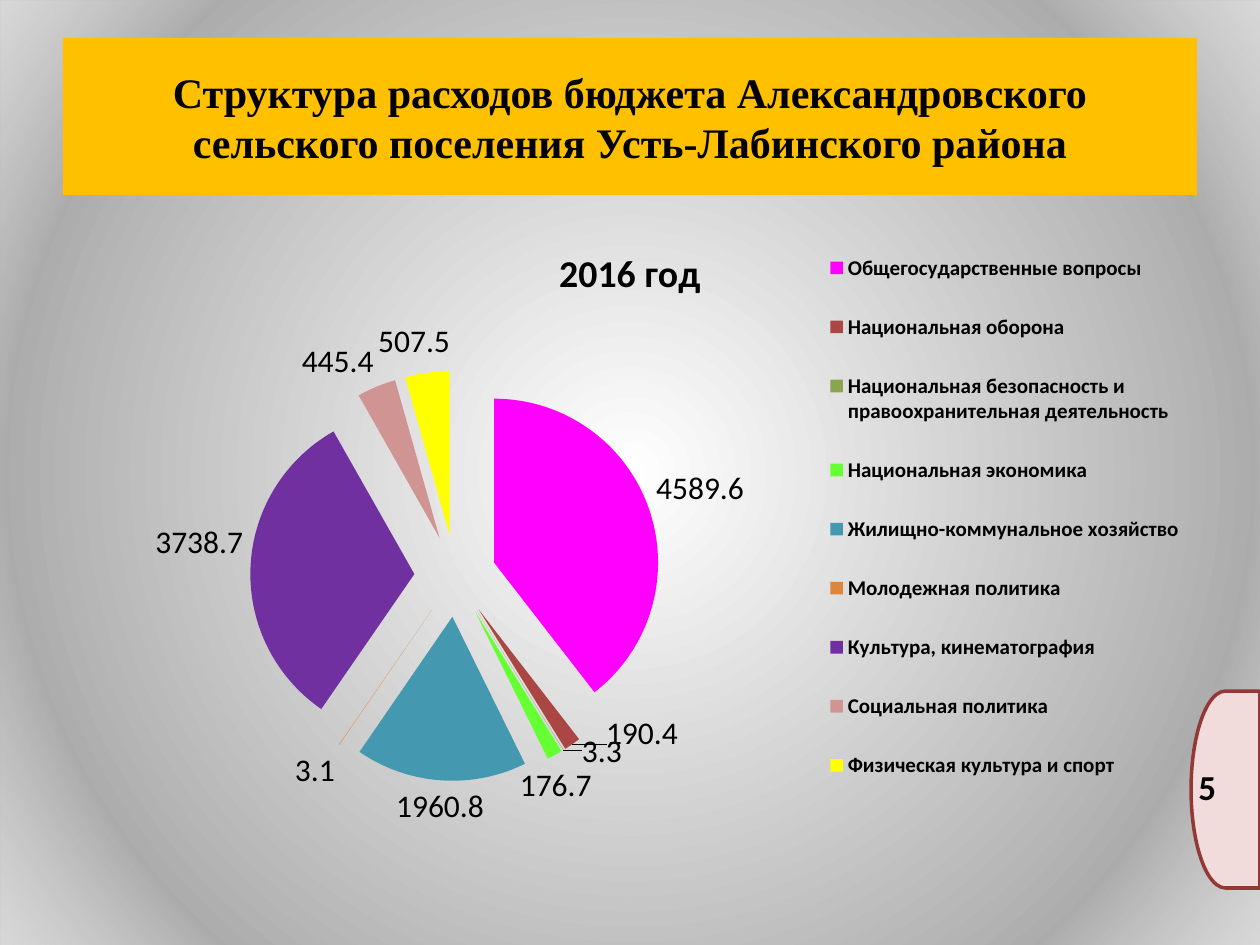
from lxml import etree
from pptx import Presentation
from pptx.chart.data import CategoryChartData
from pptx.dml.color import RGBColor
from pptx.enum.chart import XL_CHART_TYPE, XL_LABEL_POSITION as LabelPosition, XL_LEGEND_POSITION
from pptx.enum.shapes import MSO_SHAPE as Shape
from pptx.enum.text import MSO_ANCHOR as Anchor, PP_ALIGN as Align
from pptx.oxml import parse_xml
from pptx.oxml.ns import nsdecls, qn
from pptx.util import Emu, Pt

BLACK = RGBColor(0x00, 0x00, 0x00)
GOLD = RGBColor(0xFF, 0xC0, 0x00)
ROSE = RGBColor(0xF2, 0xDC, 0xDB)
MAROON = RGBColor(0x95, 0x37, 0x35)
MAGENTA = RGBColor(0xFF, 0x00, 0xFF)
BRICK = RGBColor(0xAA, 0x47, 0x44)
OLIVE = RGBColor(0x89, 0xA6, 0x4F)
LIME = RGBColor(0x66, 0xFF, 0x33)
TEAL = RGBColor(0x44, 0x99, 0xB1)
ORANGE = RGBColor(0xDB, 0x85, 0x3E)
PURPLE = RGBColor(0x70, 0x30, 0xA0)
PINK = RGBColor(0xD0, 0x94, 0x93)
YELLOW = RGBColor(0xFF, 0xFF, 0x00)
WHITE = RGBColor(0xFF, 0xFF, 0xFF)
GRAY = RGBColor(0x97, 0x97, 0x97)
SILVER = RGBColor(0xD9, 0xD9, 0xD9)

SLIDE_BOX = (0, 0, 1260, 945)
TITLE_BOX = (63, 38, 1134, 157)
CHART_BOX = (63, 220, 1134, 624)
PLOT_BOX = (250, 371, 410, 410)
LEGEND_BOX = (820, 221, 369, 591)
TAB_BOX = (1191, 691, 69, 197)
NUMBER_BOX = (1186, 759, 73, 55)

BACKGROUND_STOPS = [(0, WHITE, 100), (100, GRAY, 100)]
VIGNETTE_STOPS = [(79, WHITE, 0), (100, SILVER, 100)]
TITLE = "Структура расходов бюджета Александровского сельского поселения Усть-Лабинского района"
CHART_TITLE = "2016 год"
PAGE_NUMBER = "5"
EXPENSES = [
    ("Общегосударственные вопросы", 4589.6, MAGENTA),
    ("Национальная оборона", 190.4, BRICK),
    ("Национальная безопасность и правоохранительная деятельность", 3.3, OLIVE),
    ("Национальная экономика", 176.7, LIME),
    ("Жилищно-коммунальное хозяйство", 1960.8, TEAL),
    ("Молодежная политика", 3.1, ORANGE),
    ("Культура, кинематография", 3738.7, PURPLE),
    ("Социальная политика", 445.4, PINK),
    ("Физическая культура и спорт", 507.5, YELLOW),
]
LABEL_SHIFTS = {1: (30, -36), 2: (15, -24), 3: (-39, 5), 6: (0, -24), 8: (24, -5)}


def px(*lengths):
    """Turn pixel lengths into EMU."""
    return [Emu(round(length * 914400 / 126)) for length in lengths]


def format_font(font, size, bold=False, name="Calibri"):
    """Set the size, weight, typeface and colour of a font."""
    font.size, font.bold, font.name = Pt(size), bold, name
    font.color.rgb = BLACK


def write_text(frame, text, size, align=Align.LEFT, anchor=Anchor.TOP, name="Calibri"):
    """Write one bold paragraph into a text frame."""
    frame.word_wrap = True
    frame.vertical_anchor = anchor
    paragraph = frame.paragraphs[0]
    paragraph.alignment = align
    run = paragraph.add_run()
    run.text = text
    format_font(run.font, size, bold=True, name=name)


def add_filled_shape(shapes, kind, box, fill, line=None):
    """Add a flat preset shape with an optional outline."""
    shape = shapes.add_shape(kind, *px(*box))
    shape.shadow.inherit = False
    shape.fill.solid()
    shape.fill.fore_color.rgb = fill
    if line is None:
        shape.line.fill.background()
    else:
        shape.line.color.rgb, shape.line.width = line, Pt(2)
    return shape


def set_radial_gradient(element, stops):
    """Replace the first solid fill of an element with a radial gradient."""
    marks = "".join(
        f'<a:gs pos="{position * 1000}"><a:srgbClr val="{color}">'
        f'<a:alpha val="{opacity * 1000}"/></a:srgbClr></a:gs>'
        for position, color, opacity in stops
    )
    gradient = parse_xml(
        f'<a:gradFill {nsdecls("a")} rotWithShape="1"><a:gsLst>{marks}</a:gsLst><a:path path="circle">'
        '<a:fillToRect l="50000" t="50000" r="50000" b="50000"/></a:path></a:gradFill>'
    )
    solid = next(element.iter(qn("a:solidFill")))
    solid.getparent().replace(solid, gradient)


def set_layout(element, index, **values):
    """Give a chart element a manual layout at the given child index."""
    for old in element.findall(qn("c:layout")):
        element.remove(old)
    layout = etree.Element(qn("c:layout"))
    manual = etree.SubElement(layout, qn("c:manualLayout"))
    for tag, value in values.items():
        etree.SubElement(manual, qn(f"c:{tag}")).set("val", str(value))
    element.insert(index, layout)


def chart_fractions(box):
    """Express a slide box as fractions of the chart box."""
    left, top, width, height = CHART_BOX
    x, y, w, h = box
    return dict(
        xMode="edge", yMode="edge",
        x=round((x - left) / width, 3), y=round((y - top) / height, 3),
        w=round(w / width, 3), h=round(h / height, 3),
    )


def add_expense_chart(slide):
    """Add the exploded pie of budget expenses."""
    data = CategoryChartData()
    data.categories = [name for name, _, _ in EXPENSES]
    data.add_series(CHART_TITLE, [value for _, value, _ in EXPENSES])
    chart = slide.shapes.add_chart(XL_CHART_TYPE.PIE_EXPLODED, *px(*CHART_BOX), data).chart
    format_font(chart.font, 18)
    chart.has_title = True
    chart.chart_title.include_in_layout = False
    write_text(chart.chart_title.text_frame, CHART_TITLE, 21.6, align=Align.CENTER)

    chart.has_legend = True
    legend = chart.legend
    legend.position = XL_LEGEND_POSITION.RIGHT
    legend.include_in_layout = False
    format_font(legend.font, 12, bold=True)
    set_layout(legend._element, 1, **chart_fractions(LEGEND_BOX))
    plot_area = next(chart._chartSpace.iter(qn("c:plotArea")))
    set_layout(plot_area, 0, layoutTarget="inner", **chart_fractions(PLOT_BOX))

    plot = chart.plots[0]
    plot.vary_by_categories = True
    series = plot.series[0]
    for explosion in series._element.findall(qn("c:explosion")):
        explosion.set("val", "25")
    for index, (_, _, color) in enumerate(EXPENSES):
        fill = series.points[index].format.fill
        fill.solid()
        fill.fore_color.rgb = color
    for point in series._element.findall(qn("c:dPt")):
        explosion = etree.Element(qn("c:explosion"), val="25")
        point.find(qn("c:spPr")).addprevious(explosion)

    labels = series.data_labels
    labels.show_value = True
    labels.position = LabelPosition.OUTSIDE_END
    format_font(labels.font, 18)
    for index, (right, down) in LABEL_SHIFTS.items():
        label = series.points[index].data_label
        format_font(label.font, 18)
        label.position = LabelPosition.OUTSIDE_END
        shift = dict(x=round(right / CHART_BOX[2], 3), y=round(down / CHART_BOX[3], 3))
        set_layout(label._dLbl, 1, **shift)


def main():
    """Build and save the slide."""
    presentation = Presentation()
    presentation.slide_width, presentation.slide_height = px(*SLIDE_BOX[2:])
    slide = presentation.slides.add_slide(presentation.slide_layouts[6])
    slide.background.fill.solid()
    slide.background.fill.fore_color.rgb = WHITE
    set_radial_gradient(slide.element, BACKGROUND_STOPS)
    vignette = add_filled_shape(slide.shapes, Shape.RECTANGLE, SLIDE_BOX, WHITE)
    set_radial_gradient(vignette.element, VIGNETTE_STOPS)

    banner = add_filled_shape(slide.shapes, Shape.RECTANGLE, TITLE_BOX, GOLD)
    write_text(banner.text_frame, TITLE, 24, Align.CENTER, Anchor.MIDDLE, "Times New Roman")
    add_expense_chart(slide)

    page_tab = slide.shapes.add_group_shape()
    tab = add_filled_shape(page_tab.shapes, Shape.FLOWCHART_DELAY, TAB_BOX, ROSE, MAROON)
    tab.rotation = 180
    number = page_tab.shapes.add_textbox(*px(*NUMBER_BOX))
    write_text(number.text_frame, PAGE_NUMBER, 20)
    presentation.save("out.pptx")


if __name__ == "__main__":
    main()
